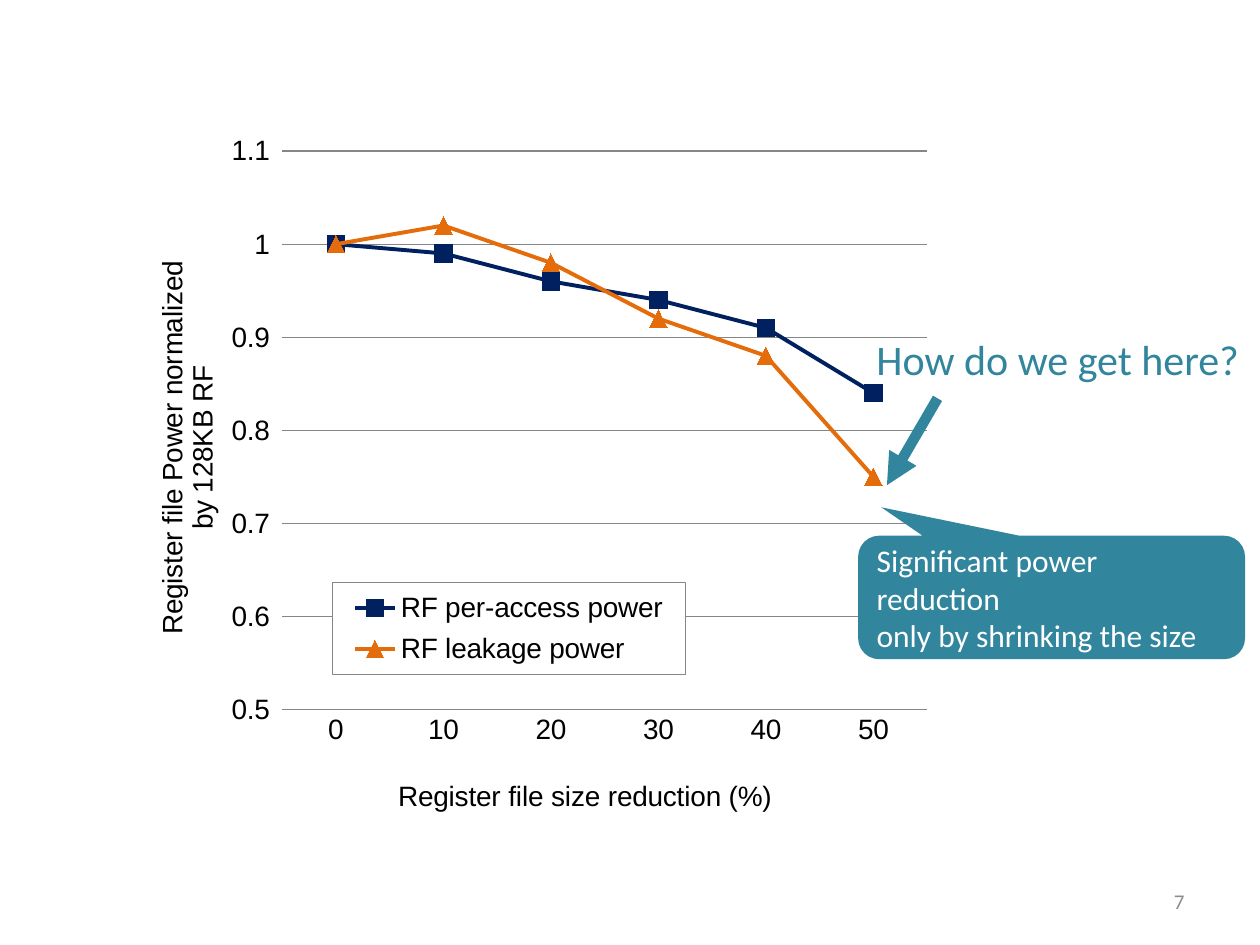
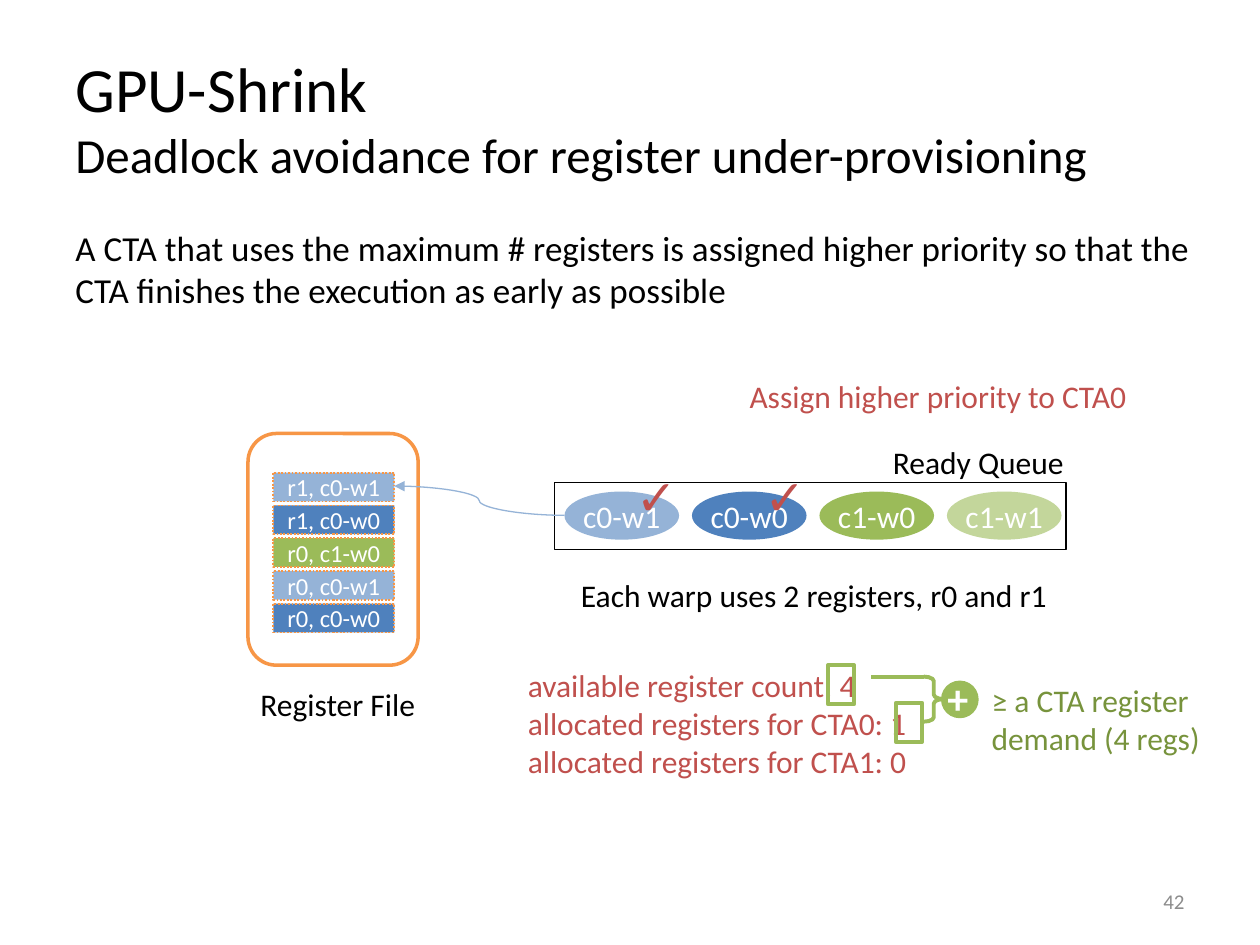
import lxml.etree
import pptx
import pptx.chart.data
import pptx.dml.color
import pptx.enum.chart
import pptx.enum.dml
import pptx.enum.shapes
import pptx.enum.text
import pptx.oxml.ns
import pptx.util

RGBColor = pptx.dml.color.RGBColor
Cm = pptx.util.Cm
Pt = pptx.util.Pt
Preset = pptx.enum.shapes.MSO_SHAPE
Connector = pptx.enum.shapes.MSO_CONNECTOR
Align = pptx.enum.text.PP_ALIGN
Anchor = pptx.enum.text.MSO_ANCHOR
qn = pptx.oxml.ns.qn

BLACK = RGBColor(0x00, 0x00, 0x00)
WHITE = RGBColor(0xFF, 0xFF, 0xFF)
GREY = RGBColor(0x8C, 0x8C, 0x8C)
GRID = RGBColor(0x86, 0x86, 0x86)
NAVY = RGBColor(0x00, 0x20, 0x60)
RUST = RGBColor(0xE4, 0x6C, 0x0A)
TEAL = RGBColor(0x31, 0x85, 0x9C)
BLUE = RGBColor(0x4F, 0x81, 0xBD)
LIGHT_BLUE = RGBColor(0x95, 0xB3, 0xD7)
GREEN = RGBColor(0x9B, 0xBB, 0x59)
LIGHT_GREEN = RGBColor(0xC3, 0xD6, 0x9B)
DARK_GREEN = RGBColor(0x77, 0x93, 0x3C)
ORANGE = RGBColor(0xF7, 0x96, 0x46)
RED = RGBColor(0xC0, 0x50, 0x4D)


def add_xml(parent, tag, **attributes):
    return lxml.etree.SubElement(parent, qn(tag), attributes)


def place(part, after=None, inner=False, **fractions):
    for old_layout in part.findall(qn("c:layout")):
        part.remove(old_layout)
    layout = lxml.etree.Element(qn("c:layout"))
    manual = add_xml(layout, "c:manualLayout")
    if inner:
        add_xml(manual, "c:layoutTarget", val="inner")
    for side in ("x", "y"):
        add_xml(manual, f"c:{side}Mode", val="edge")
    for side, fraction in fractions.items():
        add_xml(manual, f"c:{side}", val=str(fraction))
    part.insert(0 if after is None else part.index(part.find(qn(after))) + 1, layout)


class Deck:
    font = "Calibri"
    chart_font = "Arial"

    def __init__(self):
        self.presentation = pptx.Presentation()
        self.presentation.slide_width = Cm(25.4)
        self.presentation.slide_height = Cm(19.05)
        self.slide = None

    def new_slide(self, number):
        self.slide = self.presentation.slides.add_slide(self.presentation.slide_layouts[6])
        self.text(number, (18.21, 17.65, 5.92, 1.02), 12, GREY, wrap=True,
                  anchor=Anchor.MIDDLE, align=Align.RIGHT)

    def fill_text(self, frame, text, size, color, bold=False, align=Align.LEFT, font=font):
        frame.text = text
        for paragraph in frame.paragraphs:
            paragraph.alignment = align
            for run in paragraph.runs:
                run.font.name = font
                run.font.size = Pt(size)
                run.font.bold = bold
                run.font.color.rgb = color

    def text(self, text, at, size, color, wrap=False, anchor=Anchor.TOP, **style):
        frame = self.slide.shapes.add_textbox(*map(Cm, at)).text_frame
        frame.word_wrap = wrap
        frame.vertical_anchor = anchor
        if not wrap:
            frame.auto_size = pptx.enum.text.MSO_AUTO_SIZE.SHAPE_TO_FIT_TEXT
        self.fill_text(frame, text, size, color, **style)
        return frame

    def shape(self, preset, at, fill=None, line=None, width=1, adjustments=()):
        shape = self.slide.shapes.add_shape(preset, *map(Cm, at))
        shape.shadow.inherit = False
        for index, adjustment in enumerate(adjustments):
            shape.adjustments[index] = adjustment
        if fill is None:
            shape.fill.background()
        else:
            shape.fill.solid()
            shape.fill.fore_color.rgb = fill
        if line is None:
            shape.line.fill.background()
        else:
            shape.line.color.rgb = line
            shape.line.width = Pt(width)
        shape.text_frame.word_wrap = True
        shape.text_frame.vertical_anchor = Anchor.MIDDLE
        return shape

    def line(self, start, end, color, width, kind=Connector.STRAIGHT, arrow=False):
        line = self.slide.shapes.add_connector(kind, *map(Cm, start + end))
        line.line.color.rgb = color
        line.line.width = Pt(width)
        properties = line.element.spPr
        if arrow:
            add_xml(properties.find(qn("a:ln")), "a:tailEnd", type="triangle")
        add_xml(properties, "a:effectLst")

    def axis_title(self, axis, text, rotation, x, y):
        title = axis.axis_title
        self.fill_text(title.text_frame, text, 16, BLACK, align=Align.CENTER,
                       font=self.chart_font)
        title.element.find(".//" + qn("a:bodyPr")).set("rot", rotation)
        place(title.element, "c:tx", x=x, y=y)

    def line_chart(self, at, categories, series):
        data = pptx.chart.data.CategoryChartData()
        data.categories = categories
        for name, values, _, _ in series:
            data.add_series(name, values)
        chart = self.slide.shapes.add_chart(
            pptx.enum.chart.XL_CHART_TYPE.LINE_MARKERS, *map(Cm, at), data).chart
        chart.has_title = False
        chart.font.name = self.chart_font
        chart.font.size = Pt(16)
        chart.font.color.rgb = BLACK
        plot = chart.plots[0]
        plot.vary_by_categories = False
        for curve, (_, _, color, marker) in zip(plot.series, series):
            curve.smooth = False
            curve.format.line.color.rgb = color
            curve.format.line.width = Pt(2.25)
            curve.marker.style = marker
            curve.marker.size = 10
            curve.marker.format.fill.solid()
            curve.marker.format.fill.fore_color.rgb = color
            curve.marker.format.line.color.rgb = color
        return chart

    def legend(self, chart, **fractions):
        chart.has_legend = True
        chart.legend.position = pptx.enum.chart.XL_LEGEND_POSITION.RIGHT
        chart.legend.include_in_layout = False
        legend = chart.element.xpath("c:chart/c:legend")[0]
        place(legend, "c:legendPos", **fractions)
        frame = lxml.etree.Element(qn("c:spPr"))
        outline = add_xml(frame, "a:ln", w=str(Pt(0.75)))
        for parent, color in ((frame, WHITE), (outline, GRID)):
            fill = add_xml(parent, "a:solidFill")
            add_xml(fill, "a:srgbClr", val=str(color))
        frame.append(outline)
        legend.find(qn("c:overlay")).addnext(frame)


def power_slide(deck):
    deck.new_slide("7")
    markers = pptx.enum.chart.XL_MARKER_STYLE
    chart = deck.line_chart(
        (0, 2.62, 20.32, 14.25), ["0", "10", "20", "30", "40", "50"],
        [("RF per-access power", (1, 0.99, 0.96, 0.94, 0.91, 0.84), NAVY, markers.SQUARE),
         ("RF leakage power", (1, 1.02, 0.98, 0.92, 0.88, 0.75), RUST, markers.TRIANGLE)])
    place(chart.element.xpath("c:chart/c:plotArea")[0], inner=True,
          x=0.28, y=0.03, w=0.64, h=0.79)
    deck.legend(chart, x=0.33, y=0.64, w=0.35, h=0.13)

    reduction, power = chart.category_axis, chart.value_axis
    reduction.major_tick_mark = pptx.enum.chart.XL_TICK_MARK.NONE
    reduction.format.line.color.rgb = GRID
    power.minimum_scale, power.maximum_scale, power.major_unit = 0.5, 1.1, 0.1
    power.major_tick_mark = pptx.enum.chart.XL_TICK_MARK.OUTSIDE
    power.format.line.fill.background()
    power.tick_labels.number_format = "General"
    power.tick_labels.number_format_is_linked = False
    power.major_gridlines.format.line.color.rgb = GRID
    power.major_gridlines.format.line.width = Pt(0.75)
    deck.axis_title(reduction, "Register file size reduction (%)", "0", 0.39, 0.91)
    deck.axis_title(power, "Register file Power normalized\nby 128KB RF", "-5400000",
                    0.15, 0.18)

    callout = deck.shape(Preset.ROUNDED_RECTANGULAR_CALLOUT, (17.3, 10.8, 7.8, 2.49), TEAL,
                         adjustments=(-0.44, -0.73, 0.17))
    deck.fill_text(callout.text_frame,
                   "Significant power reduction\nonly by shrinking the size", 18, WHITE)
    deck.line((18.9, 8.03), (17.88, 9.78), TEAL, 6, arrow=True)
    deck.text("How do we get here?", (17.42, 6.6, 7.98, 1.27), 24, TEAL)


def shrink_slide(deck):
    deck.new_slide("42")
    title = deck.text("GPU-Shrink\vDeadlock avoidance for register under-provisioning",
                      (1.27, 0.76, 22.86, 3.18), 36, BLACK, wrap=True, anchor=Anchor.MIDDLE)
    title.paragraphs[0].runs[1].font.size = Pt(28)
    body = deck.text("A CTA that uses the maximum # registers is assigned higher priority "
                     "so that the CTA finishes the execution as early as possible",
                     (1.27, 4.45, 23.24, 12.57), 20, BLACK, wrap=True)
    body.paragraphs[0].space_before = Pt(4)

    warps = {"c0-w1": LIGHT_BLUE, "c0-w0": BLUE, "c1-w0": GREEN, "c1-w1": LIGHT_GREEN}
    for column, (warp, color) in enumerate(warps.items()):
        ellipse = deck.shape(Preset.OVAL, (11.38 + 2.57 * column, 9.91, 2.31, 0.97), color)
        frame = ellipse.text_frame
        frame.margin_left = frame.margin_right = frame.margin_top = frame.margin_bottom = 0
        deck.fill_text(frame, warp, 18, WHITE, align=Align.CENTER)
    deck.shape(Preset.RECTANGLE, (11.18, 9.73, 10.31, 1.35), line=BLACK)

    deck.shape(Preset.ROUNDED_RECTANGLE, (5, 8.74, 3.43, 4.67), line=ORANGE, width=2)
    entries = ("r1, c0-w1", "r1, c0-w0", "r0, c1-w0", "r0, c0-w1", "r0, c0-w0")
    for row, entry in enumerate(entries):
        register = deck.shape(Preset.RECTANGLE, (5.51, 9.53 + 0.66 * row, 2.44, 0.58),
                              warps[entry[4:]], ORANGE)
        register.line.dash_style = pptx.enum.dml.MSO_LINE.ROUND_DOT
        deck.fill_text(register.text_frame, entry, 14, WHITE, align=Align.CENTER)
    deck.line((11.38, 10.39), (7.95, 9.8), LIGHT_BLUE, 0.75, Connector.CURVE, arrow=True)

    for left in (12.57, 15.16):
        deck.text("✓", (left, 9.27, 1.3, 1.45), 28, RED, bold=True)
    for label, at, color in (
            ("Ready Queue", (17.75, 8.81, 4.04, 1.02), BLACK),
            ("Register File", (5, 13.69, 3.71, 1.02), BLACK),
            ("Assign higher priority to CTA0", (14.86, 7.47, 8.53, 1.02), RED),
            ("Each warp uses 2 registers, r0 and r1", (11.46, 11.48, 10.08, 1.02), BLACK),
            ("available register count: 4\nallocated registers for CTA0: 1\n"
             "allocated registers for CTA1: 0", (10.39, 13.31, 8.43, 2.57), RED),
            ("≥ a CTA register\ndemand (4 regs)", (19.74, 13.61, 5.05, 1.8), DARK_GREEN)):
        deck.text(label, at, 18, color)

    deck.shape(Preset.OVAL, (18.97, 13.72, 0.76, 0.76), GREEN)
    deck.text("+", (18.85, 13.44, 1.02, 1.27), 24, WHITE, bold=True)
    deck.shape(Preset.RIGHT_BRACE, (18.62, 13.64, 0.41, 0.91), line=GREEN, width=2.25,
               adjustments=(0.22, 0.5))
    deck.line((18.62, 13.64), (17.55, 13.64), GREEN, 2.25)
    for left, top in ((16.69, 13.41), (18.06, 14.17)):
        deck.shape(Preset.RECTANGLE, (left, top, 0.53, 0.79), line=GREEN, width=2.25)


def main():
    deck = Deck()
    power_slide(deck)
    shrink_slide(deck)
    deck.presentation.save("out.pptx")


if __name__ == "__main__":
    main()
